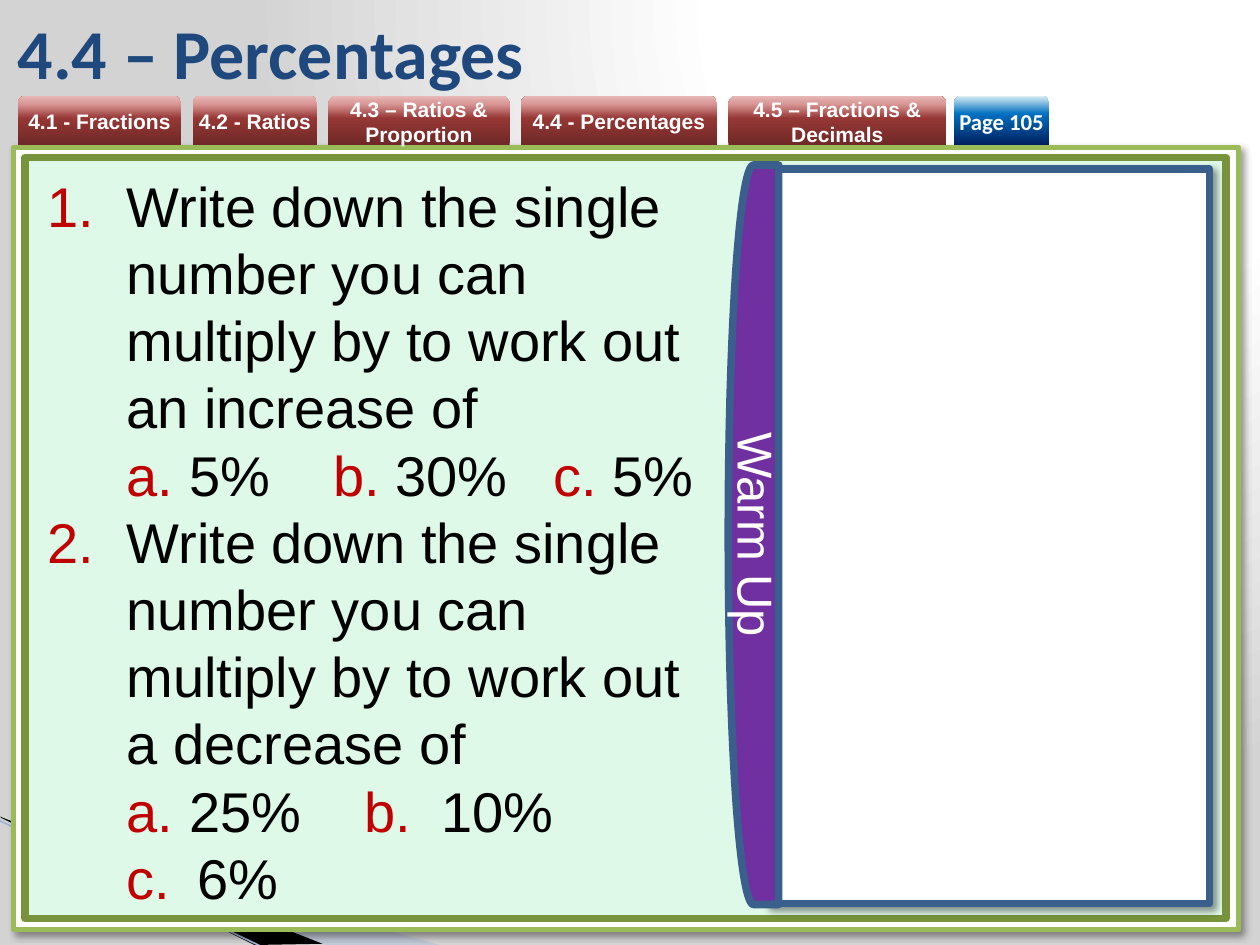
import pptx
import pptx.util
import pptx.oxml
import pptx.oxml.ns
import pptx.dml.color
import pptx.enum.shapes
import pptx.enum.text

Pt = pptx.util.Pt
SHAPE = pptx.enum.shapes.MSO_SHAPE
ALIGN = pptx.enum.text.PP_ALIGN
ANCHOR = pptx.enum.text.MSO_ANCHOR
qn = pptx.oxml.ns.qn
NS = pptx.oxml.ns.nsdecls("a")

THEME = {
    "body_font": "Arial", "head_font": "Calibri",
    "title_size": 40, "body_size": 32, "label_size": 28, "tab_size": 12, "page_size": 13,
    "title": "1F497D", "text": "000000", "white": "FFFFFF", "marker": "C00000",
    "frame": "9BBB59", "panel": "DFF9E8", "panel_line": "77933C",
    "box_line": "3A5F8C", "label": "7030A0",
    "wedge": "A7B9DB", "wedge_line": "9EB3D6",
    "backdrop": [(0, "FFFFFF"), (40, "FFFFFF"), (100, "D3D3D3")],
    "tab": [(0, "6F2927"), (54, "953735"), (83, "D99694"), (100, "E6B9B8")],
    "page": [(0, "002060"), (63, "0070C0"), (100, "DBEEF4")],
}

# Content
TITLE = "4.4 – Percentages"
TABS = [("4.1 - Fractions", 93.6), ("4.2 - Ratios", 71.3), ("4.3 – Ratios & Proportion", 103.7),
        ("4.4 - Percentages", 112.3), ("4.5 – Fractions & Decimals", 124.6)]
PAGE = "Page 105"
LABEL = "Warm Up"
# Paragraphs: level, number style, first number, left margin, hanging, tab stops, runs (text, colour)
QUESTIONS = [
    (0, "arabicPeriod", 1, 45, 45, [],
     [("Write down the single number you can \vmultiply by to work out an increase of", "text")]),
    (1, "alphaLcPeriod", 1, 81, 36, [163, 289],
     [("5%\t", "text"), ("b. ", "marker"), ("30%\t", "text"), ("c. ", "marker"), ("5%", "text")]),
    (0, "arabicPeriod", 1, 45, 45, [],
     [("Write down the single number you can \vmultiply by to work out \va decrease of", "text")]),
    (1, "alphaLcPeriod", 1, 81, 36, [181, 225],
     [("25%\t", "text"), ("b.", "marker"), ("\t10%", "text")]),
    (1, "alphaLcPeriod", 3, 85.5, 40.5, [], [("6%", "text")]),
]
WEDGES = [
    ([(-0.7, 468), (251.3, 540), (186.5, 540), (-0.7, 467.3)], "wedge", 40),
    ([(0, 466.6), (184.3, 539.3), (145.4, 540), (0.7, 467.3)], "text", 100),
]
# Frames: position, fill, line, line width, shadow
FRAMES = [
    ((7.9, 84.2, 699.8, 447.1), "white", "frame", 3, True),
    ((14.4, 90, 686.2, 434.9), "panel", "panel_line", 4.33, False),
    ((439.2, 96.5, 252, 419.8), "white", "box_line", 4.33, True),
]
TAB_LEFT, TAB_TOP, TAB_GAP, TAB_HEIGHT = 10.1, 54.7, 6.3, 28.1


def rgb(name):
    return pptx.dml.color.RGBColor.from_string(THEME[name])


def style(run, size, colour, font="body_font", bold=False):
    run.font.size = Pt(THEME[size])
    run.font.name = THEME[font]
    run.font.bold = bold
    run.font.color.rgb = rgb(colour)


def set_gradient(fill, root, stops):
    fill.gradient()
    grad = root.find(".//" + qn("a:gradFill"))
    items = "".join(f'<a:gs pos="{pos * 1000}"><a:srgbClr val="{c}"/></a:gs>' for pos, c in stops)
    grad.replace(grad.find(qn("a:gsLst")), pptx.oxml.parse_xml(f"<a:gsLst {NS}>{items}</a:gsLst>"))
    return grad


def add_shape(s, kind, box, fill=None, line=None, width=0):
    sp = s.shapes.add_shape(kind, *map(Pt, box))
    sp.shadow.inherit = False
    if fill:
        sp.fill.solid()
        sp.fill.fore_color.rgb = rgb(fill)
    if line:
        sp.line.color.rgb = rgb(line)
        sp.line.width = Pt(width)
    else:
        sp.line.fill.background()
    return sp


def set_label(sp, text, size, font="body_font", bold=False):
    tf = sp.text_frame
    tf.text = text
    tf.vertical_anchor = ANCHOR.MIDDLE
    p = tf.paragraphs[0]
    p.alignment = ALIGN.CENTER
    style(p.runs[0], size, "white", font, bold)


def add_tab(s, text, left, width, stops, size, font):
    sp = add_shape(s, SHAPE.ROUND_2_SAME_RECTANGLE, (left, TAB_TOP, width, TAB_HEIGHT))
    set_gradient(sp.fill, sp._element, THEME[stops])
    sp.fill.gradient_angle = 90
    tf = sp.text_frame
    tf.margin_left = tf.margin_top = tf.margin_right = tf.margin_bottom = 0
    set_label(sp, text, size, font, True)


def add_backdrop(s):
    grad = set_gradient(s.background.fill, s._element, THEME["backdrop"])
    grad.replace(grad.find(qn("a:lin")), pptx.oxml.parse_xml(
        f'<a:path {NS} path="circle"><a:fillToRect l="65000" b="98000"/></a:path>'))
    for points, colour, alpha in WEDGES:
        (x, y), *rest = [(Pt(a), Pt(b)) for a, b in points]
        builder = s.shapes.build_freeform(x, y)
        builder.add_line_segments(rest, close=True)
        sp = builder.convert_to_shape()
        sp.shadow.inherit = False
        sp.fill.solid()
        sp.fill.fore_color.rgb = rgb(colour)
        sp.line.fill.background()
        if alpha < 100:
            sp._element.spPr.find(".//" + qn("a:srgbClr")).append(
                pptx.oxml.parse_xml(f'<a:alpha {NS} val="{alpha * 1000}"/>'))
    line = s.shapes.add_connector(pptx.enum.shapes.MSO_CONNECTOR.STRAIGHT,
                                  Pt(-0.7), Pt(468.7), Pt(150.5), Pt(541.4))
    line.line.color.rgb = rgb("wedge_line")
    line.line.width = Pt(0.95)
    line._element.spPr.append(pptx.oxml.parse_xml(f"<a:effectLst {NS}/>"))


def add_frames(s):
    for box, fill, line, width, shadow in FRAMES:
        sp = add_shape(s, SHAPE.RECTANGLE, box, fill, line, width)
        if shadow:
            sp._element.spPr.find(qn("a:effectLst")).append(pptx.oxml.parse_xml(
                f'<a:outerShdw {NS} blurRad="{Pt(4)}" dist="{Pt(3)}" dir="2700000">'
                '<a:srgbClr val="000000"><a:alpha val="40000"/></a:srgbClr></a:outerShdw>'))


def add_questions(s):
    tf = s.shapes.add_textbox(Pt(20.2), Pt(94.3), Pt(414), Pt(433.4)).text_frame
    tf.word_wrap = True
    for i, (level, number, start, margin, hang, stops, runs) in enumerate(QUESTIONS):
        p = tf.add_paragraph() if i else tf.paragraphs[0]
        p.text = "".join(text for text, _ in runs) if len(runs) == 1 else ""
        p.level = level
        pPr = p._p.get_or_add_pPr()
        pPr.set("marL", str(Pt(margin)))
        pPr.set("indent", str(-Pt(hang)))
        first = f' startAt="{start}"' if start > 1 else ""
        tabs = "".join(f'<a:tab pos="{Pt(x)}" algn="l"/>' for x in stops)
        for xml in (f'<a:buClr {NS}><a:srgbClr val="{THEME["marker"]}"/></a:buClr>',
                    f'<a:buFont {NS} typeface="+mj-lt"/>',
                    f'<a:buAutoNum {NS} type="{number}"{first}/>',
                    f"<a:tabLst {NS}>{tabs}</a:tabLst>"):
            pPr.append(pptx.oxml.parse_xml(xml))
        if len(runs) > 1:
            for text, _ in runs:
                p.add_run().text = text
        colours = [c for _, c in runs] if len(runs) > 1 else [runs[0][1]] * len(p.runs)
        for r, colour in zip(p.runs, colours):
            style(r, "body_size", colour)


def main():
    prs = pptx.Presentation()
    prs.slide_width, prs.slide_height = Pt(720), Pt(540)
    s = prs.slides.add_slide(prs.slide_layouts[5])
    add_backdrop(s)
    add_frames(s)

    # Title
    title = s.shapes.title
    title.left, title.top, title.width, title.height = map(Pt, (2.9, 3.6, 595.4, 51.1))
    title.text_frame.text = TITLE
    title.text_frame.vertical_anchor = ANCHOR.MIDDLE
    p = title.text_frame.paragraphs[0]
    p.alignment = ALIGN.LEFT
    style(p.runs[0], "title_size", "title", "head_font", True)

    # Section tabs and page tab
    left = TAB_LEFT
    for text, width in TABS:
        add_tab(s, text, left, width, "tab", "tab_size", "body_font")
        left += width + TAB_GAP
    add_tab(s, PAGE, 545, 54.7, "page", "page_size", "head_font")

    add_questions(s)

    # Side label
    label = add_shape(s, SHAPE.FLOWCHART_DELAY, (416.2, 94.3, 28.8, 422.6),
                      "label", "box_line", 4.33)
    label._element.spPr.find(qn("a:xfrm")).set("flipH", "1")
    set_label(label, LABEL, "label_size")
    label.text_frame._txBody.bodyPr.set("vert", "vert")

    prs.save("out.pptx")


if __name__ == "__main__":
    main()
